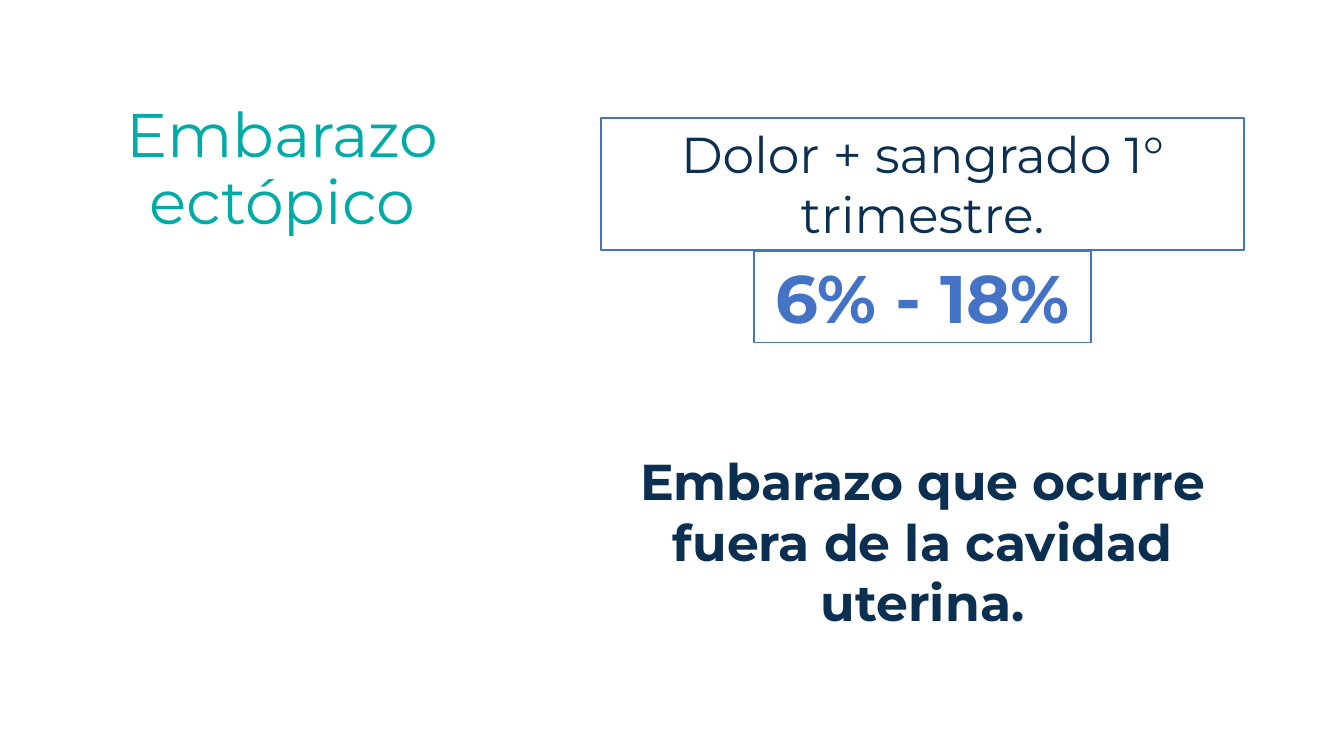
from dataclasses import dataclass

from pptx import Presentation
from pptx import util as u
from pptx.dml.color import RGBColor
from pptx.enum import shapes, text


# Colours and type sizes
@dataclass(frozen=True)
class Theme:
    font: str = "Montserrat"
    white: str = "FFFFFF"
    navy: str = "0B2F51"
    blue: str = "4472C4"
    teal: str = "00AAA7"
    head: int = 44
    rate: int = 48
    body: int = 36


@dataclass(frozen=True)
class Box:
    words: str
    left: float
    top: float
    width: float
    height: float
    size: int
    color: str
    bold: bool = False
    edge: str = ""


T = Theme()

TITLE = Box("Embarazo ectópico", 0.37, 0.97, 4.86, 1.45, T.head, T.teal)
BOXES = [
    Box("Dolor + sangrado 1° trimestre.", 5.96, 1.17, 6.38, 1.31,
        T.body, T.navy, edge=T.blue),
    Box("6% - 18%", 7.48, 2.49, 3.34, 0.91,
        T.rate, T.blue, bold=True, edge=T.blue),
    Box("Embarazo que ocurre fuera de la cavidad uterina.", 6.19, 4.42, 5.92, 1.92,
        T.body, T.navy, bold=True),
]


def place(box: Box) -> dict:
    """Position and size of a box, as shape attributes."""
    return {name: u.Inches(getattr(box, name))
            for name in ("left", "top", "width", "height")}


def write(shape, box: Box, anchor, fit, space: float = 1.0) -> None:
    """Fill a shape with the centred text of a box."""
    frame = shape.text_frame
    frame.text = box.words
    para = frame.paragraphs[0]
    font = para.runs[0].font
    looks = [
        (frame, {"word_wrap": True, "vertical_anchor": anchor, "auto_size": fit}),
        (para, {"alignment": text.PP_ALIGN.CENTER, "line_spacing": space}),
        (font, {"name": T.font, "size": u.Pt(box.size), "bold": box.bold}),
        (font.color, {"rgb": RGBColor.from_string(box.color)}),
    ]
    for item, values in looks:
        for name, value in values.items():
            setattr(item, name, value)


def draw(slide, box: Box) -> None:
    """Add a white rectangle, outlined when the box has an edge colour."""
    shape = slide.shapes.add_shape(shapes.MSO_SHAPE.RECTANGLE, **place(box))
    shape.shadow.inherit = False
    shape.fill.solid()
    shape.fill.fore_color.rgb = RGBColor.from_string(T.white)
    if box.edge:
        shape.line.color.rgb = RGBColor.from_string(box.edge)
        shape.line.width = u.Pt(1)
    else:
        shape.line.fill.background()
    write(shape, box, text.MSO_ANCHOR.TOP, text.MSO_AUTO_SIZE.SHAPE_TO_FIT_TEXT)


def main() -> None:
    deck = Presentation()
    deck.slide_width = u.Inches(13.33)
    deck.slide_height = u.Inches(7.5)
    slide = deck.slides.add_slide(deck.slide_layouts.get_by_name("Title Only"))

    # Title
    title = slide.shapes.title
    for name, value in place(TITLE).items():
        setattr(title, name, value)
    write(title, TITLE, text.MSO_ANCHOR.MIDDLE, text.MSO_AUTO_SIZE.NONE, 0.9)

    # Symptoms, rate and definition
    for box in BOXES:
        draw(slide, box)

    deck.save("out.pptx")


if __name__ == "__main__":
    main()
